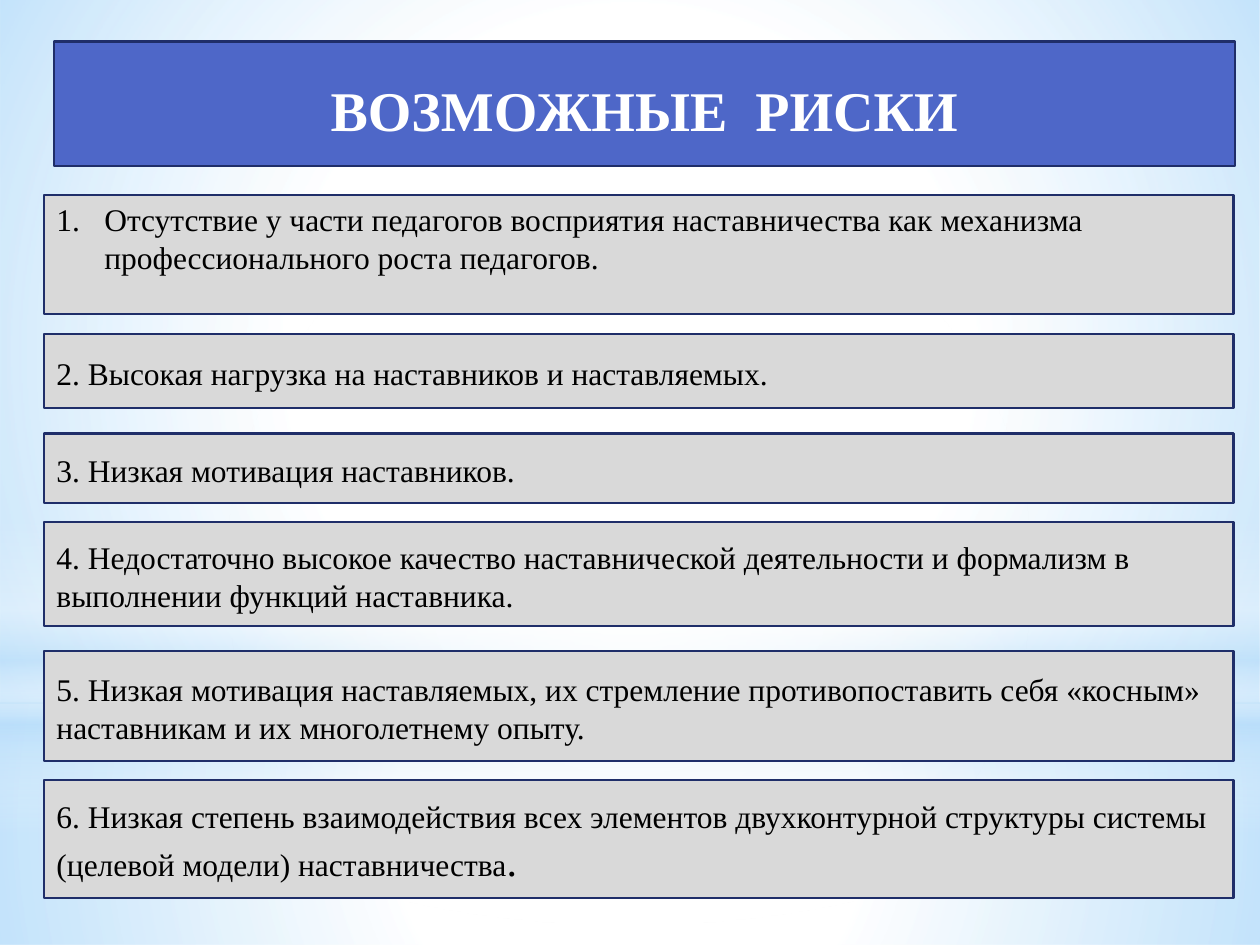
from lxml import etree
from pptx import Presentation
from pptx.dml.color import RGBColor
from pptx.enum.shapes import MSO_SHAPE
from pptx.enum.text import MSO_ANCHOR, MSO_AUTO_SIZE, PP_ALIGN
from pptx.oxml import parse_xml
from pptx.oxml.ns import qn
from pptx.util import Inches, Pt

RECTANGLE, OVAL = MSO_SHAPE.RECTANGLE, MSO_SHAPE.OVAL
MIDDLE = MSO_ANCHOR.MIDDLE
NO_AUTOFIT = MSO_AUTO_SIZE.NONE
LEFT, CENTER = PP_ALIGN.LEFT, PP_ALIGN.CENTER
DRAWING = "http://schemas.openxmlformats.org/drawingml/2006/main"
FONT = "Times New Roman"
BLUE, NAVY, GREY, BLACK, WHITE, SKY = (
    "4E67C8", "1F2E69", "D9D9D9", "000000", "FFFFFF", "B4DCFA")

RADIAL = ('<a:path path="circle"><a:fillToRect l="50000" t="50000" '
          'r="50000" b="50000"/></a:path>')
VERTICAL = '<a:lin ang="5400000" scaled="0"/>'

# Preset, box, direction, stops as (position %, colour, opacity %)
BACKDROP = [
    (RECTANGLE, (0, 5.58, 10, 1.92), RADIAL,
     [(0, WHITE, 91), (37, WHITE, 76), (100, SKY, 79)]),
    (RECTANGLE, (0, 0, 10, 5.58), RADIAL,
     [(0, WHITE, 89), (48, WHITE, 62), (100, SKY, 79)]),
    (RECTANGLE, (0, 4.12, 10, 2.5), VERTICAL,
     [(0, WHITE, 0), (29, WHITE, 30), (45, SKY, 40), (55, WHITE, 26),
      (65, SKY, 60), (100, WHITE, 0)]),
    (OVAL, (0, 1.75, 10, 5.58), RADIAL, [(0, WHITE, 100), (56, WHITE, 0)]),
]

# Top, height, text
RISKS = [
    (1.55, 0.94, "Отсутствие у части педагогов восприятия наставничества "
                 "как механизма профессионального роста педагогов."),
    (2.65, 0.59, "2. Высокая нагрузка на наставников и наставляемых."),
    (3.44, 0.55, "3. Низкая мотивация наставников."),
    (4.14, 0.83, "4. Недостаточно высокое качество наставнической "
                 "деятельности и формализм в выполнении функций наставника."),
    (5.17, 0.87, "5. Низкая мотивация наставляемых, их стремление "
                 "противопоставить себя «косным» наставникам и их "
                 "многолетнему опыту."),
    (6.19, 0.94, "6. Низкая степень взаимодействия всех элементов "
                 "двухконтурной структуры системы (целевой модели) "
                 "наставничества"),
]


def color(value):
    return RGBColor.from_string(value)


def outline_panel(shape, fill):
    shape.fill.solid()
    shape.fill.fore_color.rgb = color(fill)
    shape.line.color.rgb = color(NAVY)
    shape.line.width = Pt(1.25)


def format_span(span, size, ink, bold=False):
    span.font.name = FONT
    span.font.size = Pt(size)
    span.font.bold = bold
    span.font.color.rgb = color(ink)


def set_gradient(shape, direction, stops):
    shape.fill.background()
    stop_xml = "".join(
        f'<a:gs pos="{position * 1000}"><a:srgbClr val="{value}">'
        f'<a:alpha val="{opacity * 1000}"/></a:srgbClr></a:gs>'
        for position, value, opacity in stops)
    gradient = parse_xml(
        f'<a:gradFill xmlns:a="{DRAWING}" rotWithShape="1">'
        f'<a:gsLst>{stop_xml}</a:gsLst>{direction}</a:gradFill>')
    properties = shape.element.spPr
    properties.replace(properties.find(qn("a:noFill")), gradient)


def add_backdrop(page):
    """Place the soft sky gradients on the slide master, behind everything."""
    master_tree = page.slide_layout.slide_master.shapes.element
    for index, (preset, box, direction, stops) in enumerate(BACKDROP):
        shape = page.shapes.add_shape(preset, *map(Inches, box))
        shape.shadow.inherit = False
        shape.line.fill.background()
        set_gradient(shape, direction, stops)
        shape.element.nvSpPr.cNvPr.set("id", str(100 + index))
        master_tree.insert(2 + index, shape.element)


def add_title(page, box):
    title = page.shapes.title
    title.left, title.top, title.width, title.height = map(Inches, box)
    outline_panel(title, BLUE)
    frame = title.text_frame
    frame.text = "ВОЗМОЖНЫЕ  РИСКИ"
    frame.auto_size = NO_AUTOFIT
    frame.vertical_anchor = MIDDLE
    para = frame.paragraphs[0]
    para.alignment = CENTER
    para.line_spacing = 1.15
    format_span(para.runs[0], 32, WHITE, bold=True)


def number_paragraph(para):
    properties = para._p.get_or_add_pPr()
    properties.set("marL", str(Inches(0.38)))
    properties.set("indent", str(-Inches(0.38)))
    bullet_font = etree.SubElement(properties, qn("a:buFont"))
    bullet_font.set("typeface", "+mj-lt")
    etree.SubElement(properties, qn("a:buAutoNum")).set("type", "arabicPeriod")


def add_risk(page, box, text):
    panel = page.shapes.add_shape(RECTANGLE, *map(Inches, box))
    panel.shadow.inherit = False
    outline_panel(panel, GREY)
    frame = panel.text_frame
    frame.word_wrap = True
    frame.vertical_anchor = MIDDLE
    frame.margin_top = Inches(0.08)
    frame.text = text
    para = frame.paragraphs[0]
    para.alignment = LEFT
    format_span(para.runs[0], 18, BLACK)
    return panel


def add_risks(page, left, width):
    panels = [add_risk(page, (left, top, width, height), text)
              for top, height, text in RISKS]
    # The first risk is auto-numbered and sits high in its panel
    first = panels[0].text_frame
    number_paragraph(first.paragraphs[0])
    first.margin_top, first.margin_bottom = Inches(0.05), Inches(0.31)
    # The last risk ends with a larger full stop
    stop = panels[-1].text_frame.paragraphs[0].add_run()
    stop.text = "."
    format_span(stop, 24, BLACK)


def main():
    deck = Presentation()
    deck.slide_width, deck.slide_height = Inches(10), Inches(7.5)
    page = deck.slides.add_slide(deck.slide_layouts.get_by_name("Title Only"))
    page.background.fill.solid()
    page.background.fill.fore_color.rgb = color(WHITE)
    add_backdrop(page)
    add_title(page, (0.43, 0.33, 9.37, 0.99))
    add_risks(page, 0.35, 9.44)
    deck.save("out.pptx")


if __name__ == "__main__":
    main()
